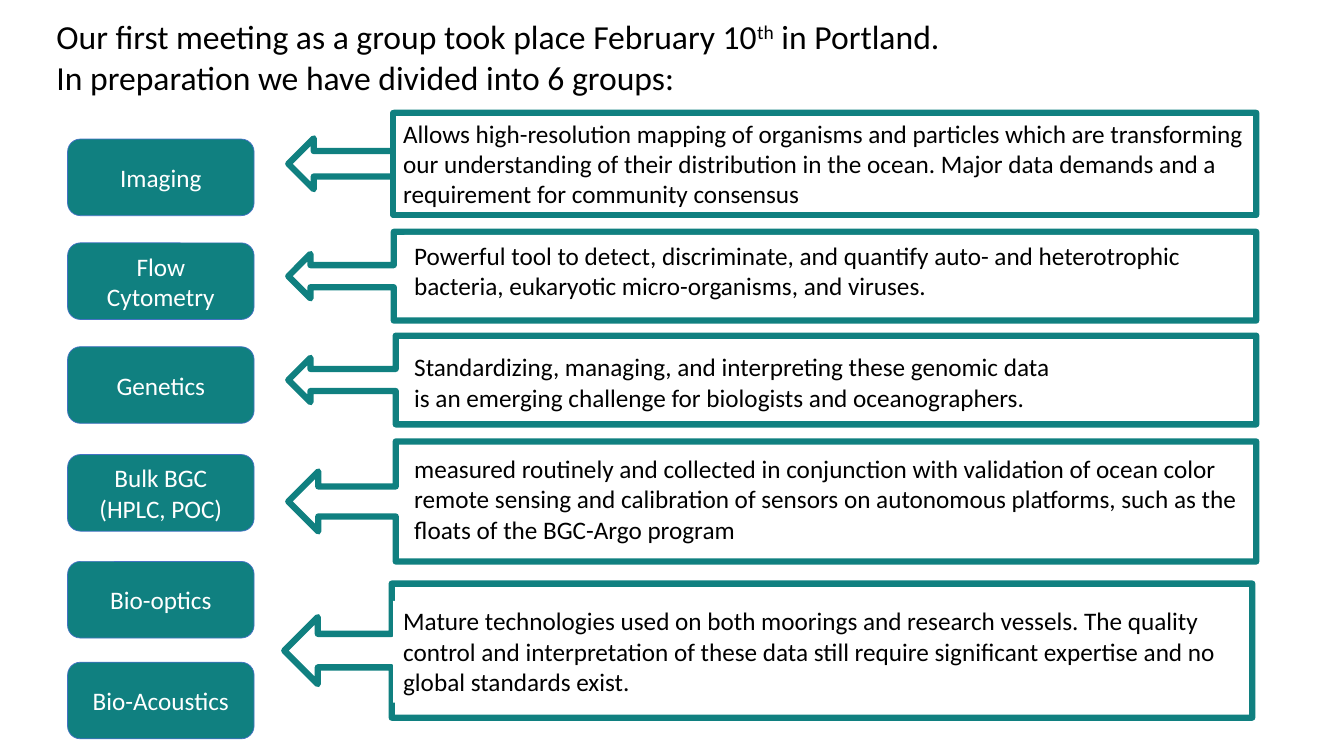
from pptx import Presentation
from pptx.dml.color import RGBColor
from pptx.enum.shapes import MSO_SHAPE
from pptx.enum.text import MSO_ANCHOR, MSO_AUTO_SIZE, PP_ALIGN
from pptx.util import Inches, Pt

RECT, ROUND = MSO_SHAPE.RECTANGLE, MSO_SHAPE.ROUNDED_RECTANGLE
ARROW = MSO_SHAPE.LEFT_ARROW_CALLOUT
LEFT, CENTER = PP_ALIGN.LEFT, PP_ALIGN.CENTER
TOP, MIDDLE = MSO_ANCHOR.TOP, MSO_ANCHOR.MIDDLE
TEAL, BLUE, WHITE, BLACK = "108080", "4472C4", "FFFFFF", "000000"

# Content: each line is a list of (text, baseline shift)
TITLE = [
    [("Our first meeting as a group took place February 10", 0),
     ("th", 30000), (" in Portland.", 0)],
    [("In preparation we have divided into 6 groups:", 0)],
]
# Group name, top
GROUPS = [
    ("Imaging", 1.38),
    ("Flow Cytometry", 2.41),
    ("Genetics", 3.44),
    ("Bulk BGC (HPLC, POC)", 4.51),
    ("Bio-optics", 5.57),
    ("Bio-Acoustics", 6.57),
]
# Callout (left, top, height, box share), note box, note border, note text
NOTES = [
    ((2.86, 1.12, 1.01, 0.891), (3.9, 1.12, 8.56, 1.01), TEAL,
     "Allows high-resolution mapping of organisms and particles which are "
     "transforming our understanding of their distribution in the ocean. "
     "Major data demands and a requirement for community consensus"),
    ((2.86, 2.3, 0.88, 0.891), (4.01, 2.33, 8.4, 0.71), None,
     "Powerful tool to detect, discriminate, and quantify auto- and "
     "heterotrophic bacteria, eukaryotic micro-organisms, and viruses."),
    ((2.86, 3.33, 0.88, 0.889), (4.01, 3.44, 6.65, 0.71), None,
     "Standardizing, managing, and interpreting these genomic data "
     "is an emerging challenge for biologists and oceanographers."),
    ((2.86, 4.38, 1.19, 0.889), (4.01, 4.45, 8.4, 1.01), None,
     "measured routinely and collected in conjunction with validation of "
     "ocean color remote sensing and calibration of sensors on autonomous "
     "platforms, such as the floats of the BGC-Argo program"),
    ((2.82, 5.79, 1.33, 0.889), (3.9, 5.96, 8.28, 1.01), None,
     "Mature technologies used on both moorings and research vessels. The "
     "quality control and interpretation of these data still require "
     "significant expertise and no global standards exist."),
]


def paint(code):
    return RGBColor.from_string(code)


def write(shape, lines, size=18, color=BLACK, align=LEFT, anchor=TOP):
    frame = shape.text_frame
    frame.word_wrap = True
    frame.auto_size = MSO_AUTO_SIZE.NONE
    frame.vertical_anchor = anchor
    for i, line in enumerate(lines):
        para = frame.add_paragraph() if i else frame.paragraphs[0]
        para.alignment = align
        for text, shift in line:
            run = para.add_run()
            run.text = text
            run.font.name = "Calibri"
            run.font.size = Pt(size)
            run.font.color.rgb = paint(color)
            if shift:
                run.font._element.set("baseline", str(shift))


def draw(kind, box, fill, line=None, width=4.5):
    shape = slide.shapes.add_shape(kind, *map(Inches, box))
    shape.shadow.inherit = False
    shape.fill.solid()
    shape.fill.fore_color.rgb = paint(fill)
    if line:
        shape.line.color.rgb = paint(line)
        shape.line.width = Pt(width)
    else:
        shape.line.fill.background()
    return shape


deck = Presentation()
deck.slide_width, deck.slide_height = Inches(13.33), Inches(7.5)
slide = deck.slides.add_slide(deck.slide_layouts[5])

# Title
title = slide.shapes.title
title.left, title.top = Inches(0.46), Inches(0.11)
title.width, title.height = Inches(12), Inches(0.91)
write(title, TITLE, size=24)

# Group buttons
for name, top in GROUPS:
    button = draw(ROUND, (0.67, top, 1.85, 0.76), TEAL, BLUE, 0.5)
    write(button, [[(name, 0)]], color=WHITE, align=CENTER, anchor=MIDDLE)

# Arrow callouts with their notes
for (left, top, height, share), box, border, text in NOTES:
    arrow = draw(ARROW, (left, top, 9.6, height), WHITE, TEAL)
    for i, value in enumerate((0.25, 0.25, 0.25, share)):
        arrow.adjustments[i] = value
    write(draw(RECT, box, WHITE, border), [[(text, 0)]])

deck.save("out.pptx")
